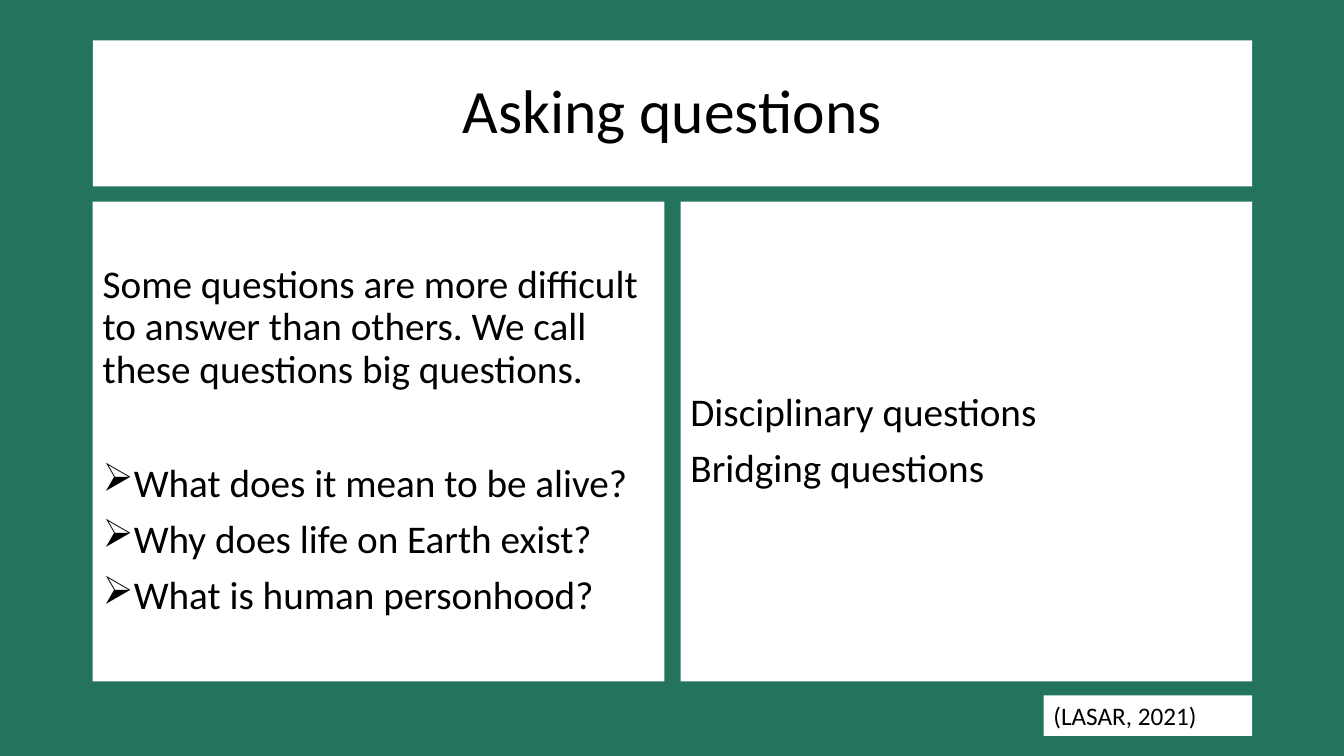
"""Build the slide on asking disciplinary and bridging questions."""
from lxml.etree import SubElement
from pptx import Presentation
from pptx.dml.color import RGBColor
from pptx.enum.text import MSO_ANCHOR, MSO_AUTO_SIZE, PP_ALIGN
from pptx.oxml.ns import qn
from pptx.util import Inches, Pt

GREEN = RGBColor(0x23, 0x73, 0x5D)
WHITE = RGBColor(0xFF, 0xFF, 0xFF)
BLACK = RGBColor(0x00, 0x00, 0x00)
BULLET = "➢"


def fill_panel(shape, position, paragraphs, size, frame_format, paragraph_format):
    shape.left, shape.top, shape.width, shape.height = map(Inches, position)
    shape.fill.solid()
    shape.fill.fore_color.rgb = WHITE
    text_frame = shape.text_frame
    for name, value in frame_format.items():
        setattr(text_frame, name, value)
    for index, (text, space_before, bulleted) in enumerate(paragraphs):
        paragraph = text_frame.add_paragraph() if index else text_frame.paragraphs[0]
        paragraph.text = text
        for name, value in paragraph_format.items():
            setattr(paragraph, name, value)
        paragraph.space_before = Pt(space_before)
        if bulleted:
            properties = paragraph._p.get_or_add_pPr()
            properties.set("marL", str(Inches(0.25)))
            properties.set("indent", str(Inches(-0.25)))
            SubElement(properties, qn("a:buChar"), char=BULLET)
        for name, value in {"name": "Calibri", "size": Pt(size)}.items():
            setattr(paragraph.font, name, value)
        paragraph.font.color.rgb = BLACK


presentation = Presentation()
presentation.slide_width = Inches(13.33)
presentation.slide_height = Inches(7.5)
slide = presentation.slides.add_slide(presentation.slide_layouts[5])
slide.background.fill.solid()
slide.background.fill.fore_color.rgb = GREEN

middle = {"word_wrap": True, "auto_size": MSO_AUTO_SIZE.NONE, "vertical_anchor": MSO_ANCHOR.MIDDLE}
growing = {"word_wrap": True, "auto_size": MSO_AUTO_SIZE.SHAPE_TO_FIT_TEXT}
body = {"alignment": PP_ALIGN.LEFT, "line_spacing": 0.9}

fill_panel(slide.shapes.title, (0.92, 0.4, 11.5, 1.45), [("Asking questions", 0, False)],
           44, middle, {"alignment": PP_ALIGN.CENTER, "line_spacing": 0.9})

big_questions = [
    ("Some questions are more difficult to answer than others. "
     "We call these questions big questions.", 0, False),
    ("What does it mean to be alive?", 51, True),
    ("Why does life on Earth exist?", 10, True),
    ("What is human personhood?", 10, True),
]
question_types = [("Disciplinary questions", 0, False), ("Bridging questions", 10, False)]
for left, paragraphs in ((0.92, big_questions), (6.75, question_types)):
    panel = slide.shapes.add_textbox(0, 0, 0, 0)
    fill_panel(panel, (left, 2, 5.67, 4.76), paragraphs, 28, middle, body)

citation = slide.shapes.add_textbox(0, 0, 0, 0)
fill_panel(citation, (10.35, 6.9, 2.07, 0.4), [("(LASAR, 2021)", 0, False)],
           18, growing, {"alignment": PP_ALIGN.LEFT})

presentation.save("out.pptx")
